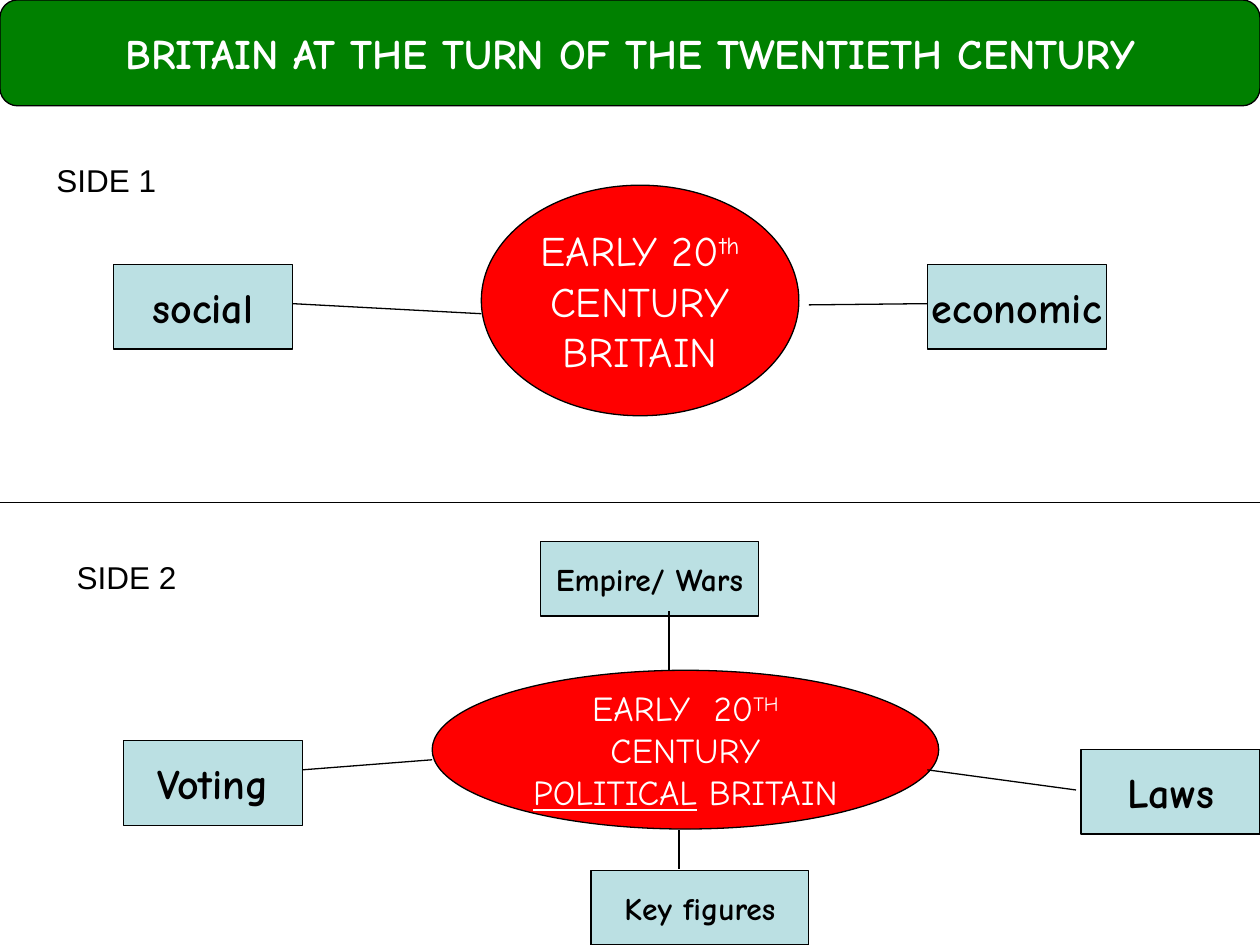
from lxml import etree
from pptx import Presentation
from pptx import util as u
from pptx.dml.color import RGBColor
from pptx.enum import shapes, text
from pptx.oxml.ns import qn

COLORS = {
    "black": "000000",
    "white": "FFFFFF",
    "title": "008000",
    "hub": "FF0000",
    "topic": "BBE0E3",
}


class MindMap:
    heading_font = "Comic Neue"
    label_font = "Arial"
    line_width = u.Pt(0.75)

    def __init__(self, page):
        self.page = page

    def color(self, name):
        return RGBColor.from_string(COLORS[name])

    def style(self, span, font, size, color, bold=False):
        span.font.name = font
        span.font.size = u.Pt(size)
        span.font.bold = bold
        span.font.color.rgb = self.color(color)

    def outline(self, line):
        line.color.rgb = self.color("black")
        line.width = self.line_width

    def shape(self, kind, place, fill, wrap):
        box = self.page.shapes.add_shape(kind, *map(u.Inches, place))
        box.shadow.inherit = False
        box.fill.solid()
        box.fill.fore_color.rgb = self.color(fill)
        self.outline(box.line)
        box.text_frame.word_wrap = wrap
        box.text_frame.vertical_anchor = text.MSO_ANCHOR.MIDDLE
        return box

    def panel(self, kind, words, place, fill, color, size):
        box = self.shape(kind, place, fill, False)
        box.text_frame.text = words
        para = box.text_frame.paragraphs[0]
        para.alignment = text.PP_ALIGN.CENTER
        self.style(para.runs[0], self.heading_font, size, color, True)

    def title(self, words, place):
        self.panel(shapes.MSO_SHAPE.ROUNDED_RECTANGLE, words, place, "title", "white", 24)

    def topic(self, words, place, size):
        self.panel(shapes.MSO_SHAPE.RECTANGLE, words, place, "topic", "black", size)

    def hub(self, lines, place, size):
        frame = self.shape(shapes.MSO_SHAPE.OVAL, place, "hub", True).text_frame
        for index, line in enumerate(lines):
            para = frame.add_paragraph() if index else frame.paragraphs[0]
            para.alignment = text.PP_ALIGN.CENTER
            for words, effect in line:
                span = para.add_run()
                span.text = words
                self.style(span, self.heading_font, size, "white")
                if effect == "underline":
                    span.font.underline = True
                elif effect == "superscript":
                    span._r.get_or_add_rPr().set("baseline", "30000")

    def label(self, words, left, top):
        box = self.page.shapes.add_textbox(*map(u.Inches, (left, top, 1.73, 0.4)))
        box.text_frame.word_wrap = True
        box.text_frame.text = words
        self.style(box.text_frame.paragraphs[0].runs[0], self.label_font, 18, "black")

    def line(self, *ends):
        link = self.page.shapes.add_connector(
            shapes.MSO_CONNECTOR.STRAIGHT, *map(u.Inches, ends))
        self.outline(link.line)
        etree.SubElement(link._element.spPr, qn("a:effectLst"))


def main():
    deck = Presentation()
    deck.slide_width, deck.slide_height = u.Inches(10), u.Inches(7.5)
    mind_map = MindMap(deck.slides.add_slide(deck.slide_layouts[6]))

    mind_map.title("BRITAIN AT THE TURN OF THE TWENTIETH CENTURY", (0, 0, 10, 0.84))
    mind_map.label("SIDE 1", 0.35, 1.23)
    mind_map.label("SIDE 2", 0.51, 4.38)

    mind_map.hub(
        [[("EARLY 20", None), ("th", "superscript"), (" CENTURY BRITAIN", None)]],
        (3.82, 1.47, 2.52, 1.83), 24)
    mind_map.hub(
        [[("EARLY  20", None), ("TH", "superscript"), (" CENTURY", None)],
         [("POLITICAL", "underline"), (" BRITAIN", None)]],
        (3.43, 5.32, 4.02, 1.26), 20)

    side_topics = [("social", 0.9, 2.1), ("economic", 7.36, 2.1),
                   ("Voting", 0.98, 5.88), ("Laws", 8.58, 5.95)]
    for words, left, top in side_topics:
        mind_map.topic(words, (left, top, 1.42, 0.67), 24)
    for words, left, top in [("Empire/ Wars", 4.29, 4.3), ("Key figures", 4.69, 6.91)]:
        mind_map.topic(words, (left, top, 1.73, 0.59), 18)

    divider = (0, 3.99, 10, 3.99)
    links = [(3.82, 2.49, 2.32, 2.41), (6.42, 2.42, 7.36, 2.41),
             (2.4, 6.11, 3.43, 6.03), (7.36, 6.11, 8.54, 6.27),
             (5.31, 5.32, 5.31, 4.85), (5.39, 6.59, 5.39, 6.9)]
    for ends in [divider, *links]:
        mind_map.line(*ends)

    deck.save("out.pptx")


if __name__ == "__main__":
    main()
